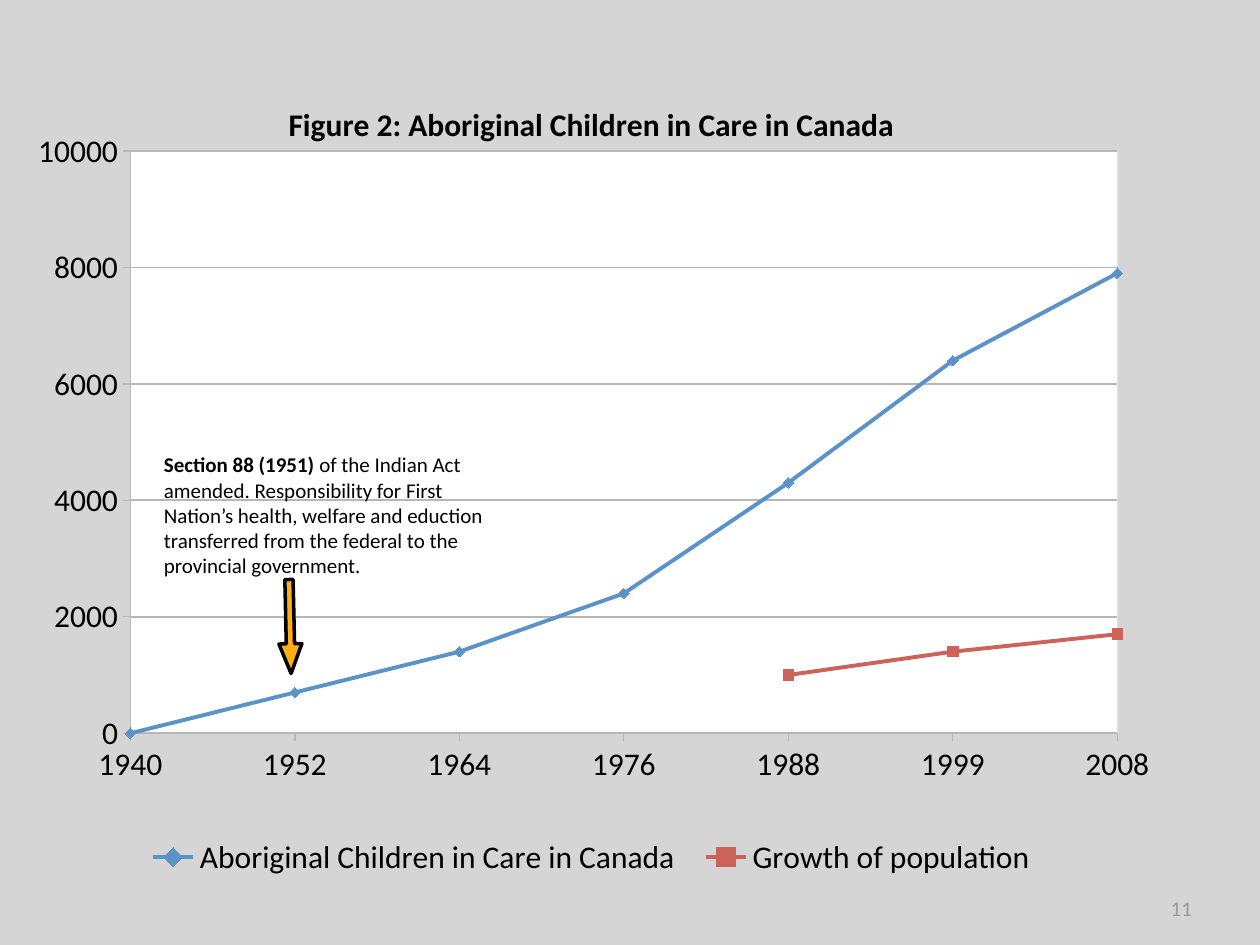
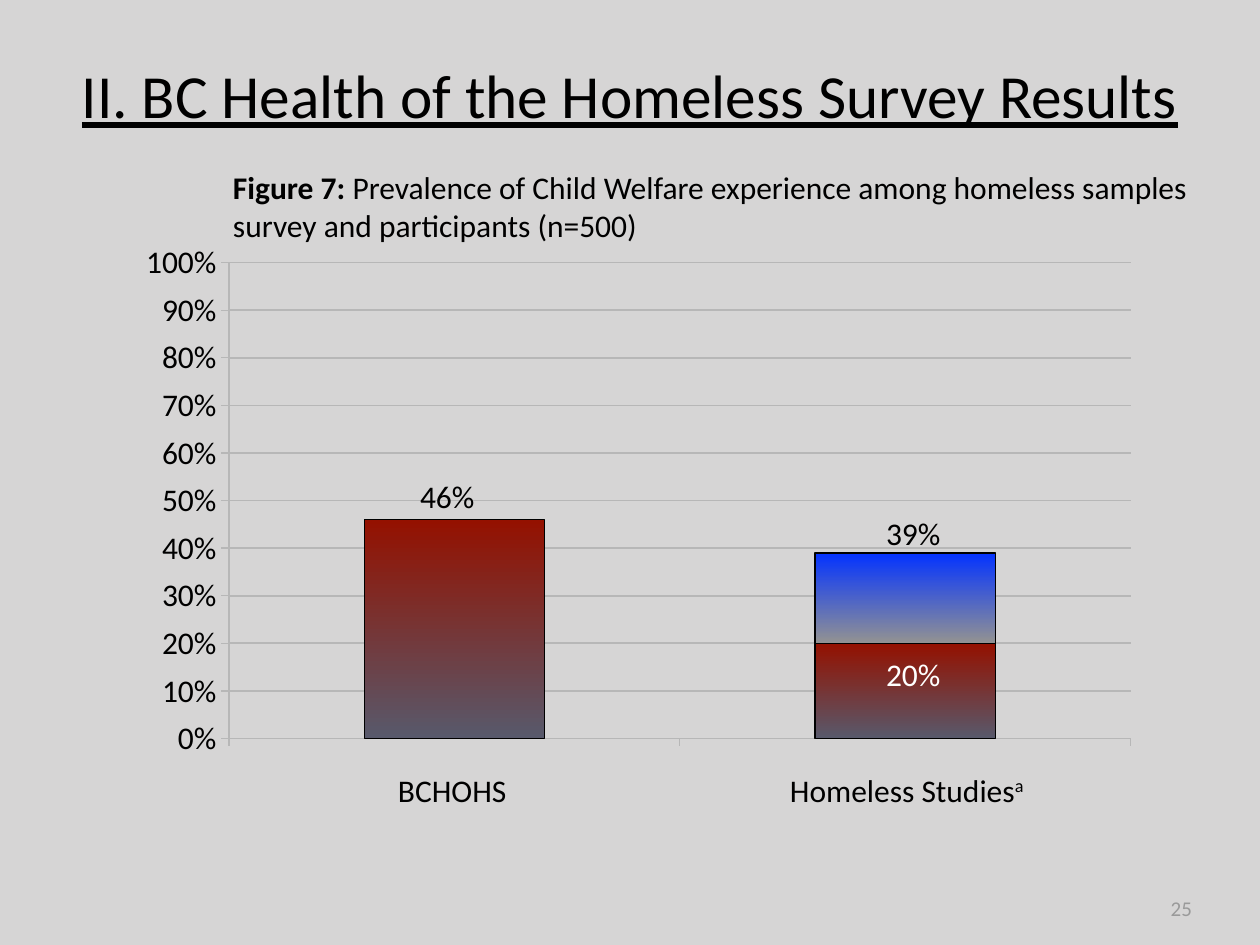
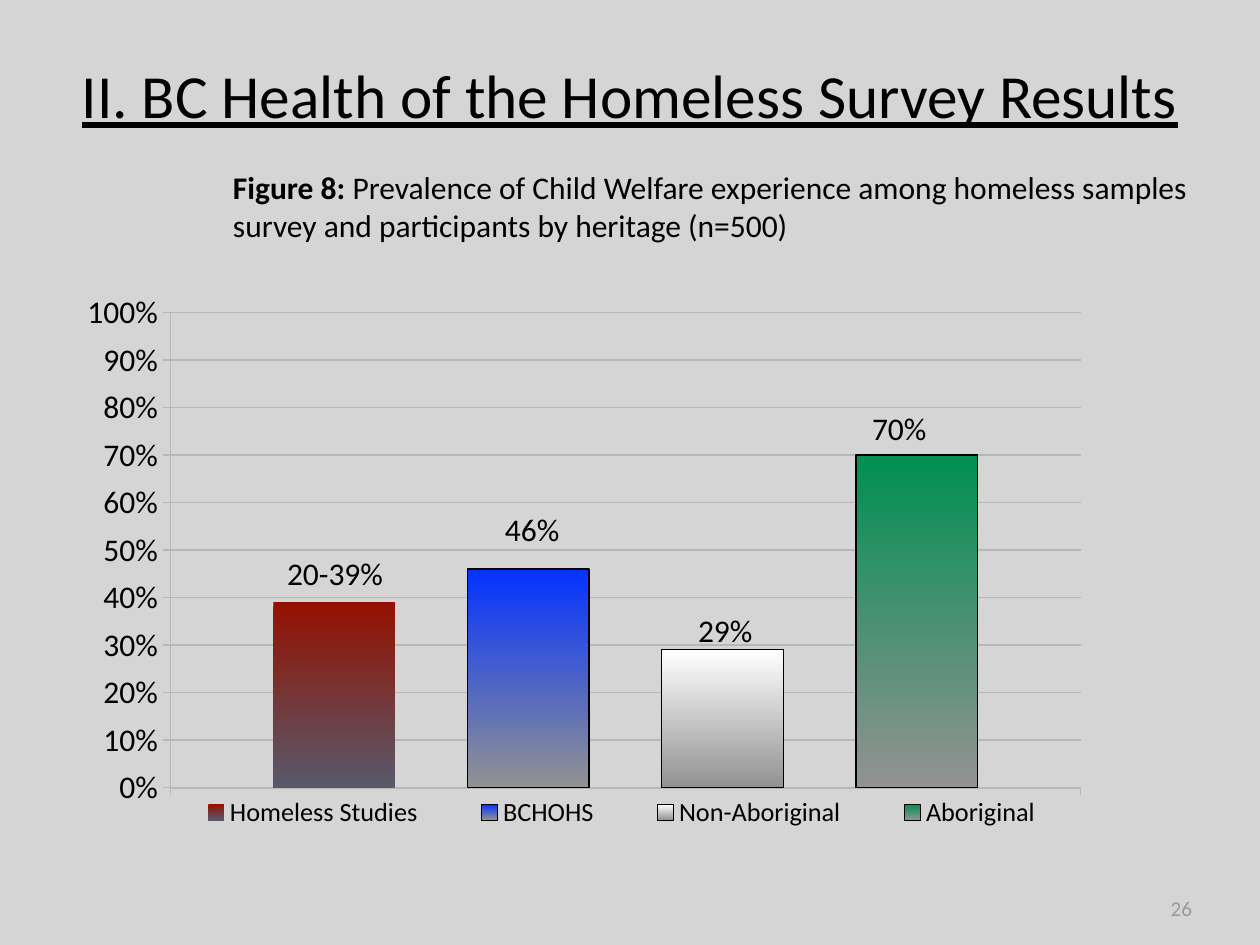
from dataclasses import dataclass

from lxml.etree import SubElement
from pptx import Presentation
from pptx.chart.data import CategoryChartData
from pptx.dml.color import RGBColor
from pptx.enum.chart import XL_CHART_TYPE as ChartType
from pptx.enum.chart import XL_LEGEND_POSITION as LegendSpot
from pptx.enum.chart import XL_MARKER_STYLE as Marker
from pptx.enum.chart import XL_TICK_LABEL_POSITION as LabelSpot
from pptx.enum.chart import XL_TICK_MARK as TickMark
from pptx.enum.shapes import MSO_SHAPE as Shape
from pptx.enum.text import MSO_ANCHOR as Anchor
from pptx.enum.text import MSO_AUTO_SIZE as AutoSize
from pptx.enum.text import PP_ALIGN as Align
from pptx.oxml import parse_xml
from pptx.oxml.ns import nsdecls, qn
from pptx.util import Emu, Pt

EMU_PER_PX = 914400 / 126
INSET = 5


@dataclass(frozen=True)
class Theme:
    font: str = "Calibri"
    background: str = "D6D5D5"
    ink: str = "000000"
    paper: str = "FFFFFF"
    muted: str = "9A9A9A"
    axis: str = "B7B7B7"
    arrow: str = "FFAD19"
    care: str = "5B92C8"
    population: str = "CC625A"
    red: tuple = ("941100", "58596B")
    blue: tuple = ("0433FF", "929292")
    white: tuple = ("FFFFFF", "929292")
    green: tuple = ("009051", "929292")
    title_size: float = 35
    body_size: float = 18
    legend_size: float = 15
    note_size: float = 12


THEME = Theme()


def px(length):
    return Emu(round(length * EMU_PER_PX))


def rgb(code):
    return RGBColor.from_string(code)


def style_font(font, size=THEME.body_size, color=THEME.ink, bold=False, underline=None):
    font.name, font.size, font.bold, font.underline = THEME.font, Pt(size), bold, underline
    font.color.rgb = rgb(color)


def write(frame, text, lead="", superscript="", align=None, tabs=(), **style):
    paragraph = frame.paragraphs[0]
    if align is not None:
        paragraph.alignment = align
    if tabs:
        stops = SubElement(paragraph._p.get_or_add_pPr(), qn("a:tabLst"))
        for position in tabs:
            SubElement(stops, qn("a:tab"), pos=str(px(position)), algn="l")
    for part in (lead, text, superscript):
        if part:
            run = paragraph.add_run()
            run.text = part
            style_font(run.font, **{**style, "bold": style.get("bold", part == lead)})
            if part == superscript:
                run.font._element.set("baseline", "32000")


def set_line(line, color, width):
    line.color.rgb = rgb(color)
    line.width = Pt(width)


def manual_layout(box, inner=False):
    target = '<c:layoutTarget val="inner"/>' if inner else ""
    modes = '<c:xMode val="edge"/><c:yMode val="edge"/>'
    sizes = "".join(f'<c:{key} val="{value}"/>' for key, value in zip("xywh", box))
    return parse_xml(f'<c:layout {nsdecls("c")}><c:manualLayout>{target}{modes}{sizes}'
                     '</c:manualLayout></c:layout>')


class Deck:
    def __init__(self, theme):
        self.theme = theme
        self.show = Presentation()
        self.show.slide_width, self.show.slide_height = px(1260), px(945)
        fill = self.show.slide_master.background.fill
        fill.solid()
        fill.fore_color.rgb = rgb(theme.background)
        self.slide = None

    def page(self, number, title=None):
        layout = self.show.slide_layouts[5 if title else 6]
        self.slide = self.show.slides.add_slide(layout)
        if title:
            self.title(title)
        self.text(1163, 891, 34, 35, number, wrap=False, anchor=Anchor.BOTTOM,
                  align=Align.RIGHT, size=self.theme.note_size, color=self.theme.muted)

    def frame(self, shape, wrap, anchor, fit):
        frame = shape.text_frame
        frame.margin_left = frame.margin_right = px(INSET)
        frame.margin_top = frame.margin_bottom = px(INSET)
        frame.word_wrap, frame.vertical_anchor, frame.auto_size = wrap, anchor, fit
        return frame

    def title(self, text):
        holder = self.slide.shapes.title
        holder.left, holder.top, holder.width, holder.height = map(px, (63, 15, 1134, 158))
        frame = self.frame(holder, True, Anchor.MIDDLE, AutoSize.NONE)
        write(frame, text, align=Align.CENTER, size=self.theme.title_size, underline=True)

    def text(self, left, top, width, height, text, wrap=True, anchor=Anchor.TOP, **style):
        box = self.slide.shapes.add_textbox(*map(px, (left, top, width, height)))
        write(self.frame(box, wrap, anchor, AutoSize.SHAPE_TO_FIT_TEXT), text, **style)

    def caption(self, lead, text):
        self.text(228, 163, 1032, 87, text, lead=lead)

    def bar_label(self, left, top, text, width=67, **style):
        self.text(left, top, width, 49, text, wrap=False, **style)

    def arrow(self, left, top, width, height, rotation):
        arrow = self.slide.shapes.add_shape(
            Shape.RIGHT_ARROW, *map(px, (left, top, width, height)))
        arrow.rotation = rotation
        arrow.adjustments[0], arrow.adjustments[1] = 0.36, 1.29
        arrow.shadow.inherit = False
        arrow.fill.solid()
        arrow.fill.fore_color.rgb = rgb(self.theme.arrow)
        set_line(arrow.line, self.theme.ink, 2)

    def chart(self, kind, box, plot_box, categories, series, number_format, maximum, step):
        data = CategoryChartData(number_format=number_format)
        data.categories = categories
        for name, values in series:
            data.add_series(name, values)
        chart = self.slide.shapes.add_chart(kind, *map(px, box), data).chart
        chart.has_title = chart.has_legend = False
        style_font(chart.font)
        area = chart._chartSpace.chart.plotArea
        for old in area.findall(qn("c:layout")):
            area.remove(old)
        area.insert(0, manual_layout(plot_box, inner=True))
        for axis in (chart.category_axis, chart.value_axis):
            axis.major_tick_mark, axis.minor_tick_mark = TickMark.OUTSIDE, TickMark.NONE
            style_font(axis.tick_labels.font)
            set_line(axis.format.line, self.theme.axis, 0.75)
        scale = chart.value_axis
        scale.minimum_scale, scale.maximum_scale, scale.major_unit = 0, maximum, step
        scale.tick_labels.number_format = number_format
        scale.tick_labels.number_format_is_linked = False
        scale.has_major_gridlines = True
        set_line(scale.major_gridlines.format.line, self.theme.axis, 1)
        return chart

    def legend(self, chart, box, size):
        chart.has_legend = True
        legend = chart.legend
        legend.position, legend.include_in_layout = LegendSpot.BOTTOM, True
        style_font(legend.font, size=size)
        legend._element.find(qn("c:legendPos")).addnext(manual_layout(box))

    def line_chart(self, box, plot_box, legend_box, title, categories, series):
        chart = self.chart(ChartType.LINE_MARKERS, box, plot_box, categories,
                           [entry[:2] for entry in series], "0", 10000, 2000)
        chart.has_title = True
        write(chart.chart_title.text_frame, title, bold=True)
        self.legend(chart, legend_box, self.theme.body_size)
        chart.category_axis.tick_label_position = LabelSpot.LOW
        scale = chart.value_axis._element
        for old in scale.findall(qn("c:crossBetween")):
            scale.remove(old)
        scale.find(qn("c:crosses")).addnext(
            parse_xml(f'<c:crossBetween {nsdecls("c")} val="midCat"/>'))
        chart._chartSpace.chart.plotArea.append(parse_xml(
            f'<c:spPr {nsdecls("c", "a")}><a:solidFill>'
            f'<a:srgbClr val="{self.theme.paper}"/></a:solidFill></c:spPr>'))
        chart.plots[0].vary_by_categories = False
        for line, (_, _, color, marker) in zip(chart.plots[0].series, series):
            line.smooth = False
            set_line(line.format.line, color, 2.25)
            line.marker.style, line.marker.size = marker, 6
            line.marker.format.fill.solid()
            line.marker.format.fill.fore_color.rgb = rgb(color)
            set_line(line.marker.format.line, color, 0.75)

    def column_chart(self, kind, box, plot_box, categories, series, gap, overlap):
        chart = self.chart(kind, box, plot_box, categories,
                           [entry[:2] for entry in series], "#,##0%", 1, 0.1)
        chart.category_axis.tick_label_position = LabelSpot.NONE
        plot = chart.plots[0]
        plot.vary_by_categories, plot.gap_width, plot.overlap = False, gap, overlap
        for column, (_, _, shades, outlined) in zip(plot.series, series):
            fill = column.format.fill
            fill.gradient()
            fill.gradient_angle = 270
            for stop, shade, position in zip(fill.gradient_stops, shades, (0, 1)):
                stop.color.rgb, stop.position = rgb(shade), position
            if outlined:
                set_line(column.format.line, self.theme.ink, 0.75)
            else:
                column.format.line.fill.background()
        return chart


def care_growth(deck):
    deck.page("11")
    deck.line_chart(
        (32, 74, 1119, 811), (0.088, 0.095, 0.882, 0.718), (0.09, 0.94, 0.82, 0.06),
        "Figure 2: Aboriginal Children in Care in Canada",
        ["1940", "1952", "1964", "1976", "1988", "1999", "2008"],
        [("Aboriginal Children in Care in Canada", [0, 700, 1400, 2400, 4300, 6400, 7900],
          THEME.care, Marker.DIAMOND),
         ("Growth of population", [None] * 4 + [1000, 1400, 1700],
          THEME.population, Marker.SQUARE)])
    deck.arrow(243, 615, 94, 23, 88.7)
    deck.text(159, 447, 339, 134,
              "of the Indian Act amended. Responsibility for First Nation’s health, welfare "
              "and eduction transferred from the federal to the provincial government.",
              lead="Section 88 (1951) ", size=THEME.note_size)


def homeless_samples(deck, title):
    deck.page("25", title)
    deck.column_chart(
        ChartType.COLUMN_STACKED, (127, 226, 1009, 539), (0.101, 0.068, 0.894, 0.883),
        ["1", "2"],
        [("Series 1", [0.46, 0.2], THEME.red, True),
         ("Series 2", [None, 0.19], THEME.blue, True)], gap=150, overlap=100)
    deck.caption("Figure 7:", " Prevalence of Child Welfare experience among homeless "
                 "samples survey and participants (n=500)")
    deck.bar_label(881, 509, "39%")
    deck.bar_label(881, 650, "20%", color=THEME.paper)
    deck.bar_label(415, 472, "46%")
    deck.text(330, 766, 771, 49, "\tBCHOHS\tHomeless Studies", superscript="a",
              tabs=(63, 455))


def heritage(deck, title):
    deck.page("26", title)
    chart = deck.column_chart(
        ChartType.COLUMN_CLUSTERED, (68, 276, 1065, 563), (0.096, 0.065, 0.855, 0.844),
        ["1"],
        [("Homeless Studies", [0.39], THEME.red, False),
         ("BCHOHS", [0.46], THEME.blue, True),
         ("Non-Aboriginal", [0.29], THEME.white, True),
         ("Aboriginal", [0.7], THEME.green, True)], gap=170, overlap=-60)
    deck.legend(chart, (0.08, 0.93, 0.88, 0.06), THEME.legend_size)
    deck.caption("Figure 8:", " Prevalence of Child Welfare experience among homeless "
                 "samples survey and participants by heritage (n=500)")
    deck.bar_label(282, 549, "20-39%", width=108)
    for left, top, share in ((500, 505, "46%"), (693, 606, "29%"), (867, 404, "70%")):
        deck.bar_label(left, top, share)


def main():
    deck = Deck(THEME)
    survey = "II. BC Health of the Homeless Survey Results"
    care_growth(deck)
    homeless_samples(deck, survey)
    heritage(deck, survey)
    deck.show.save("out.pptx")


if __name__ == "__main__":
    main()
